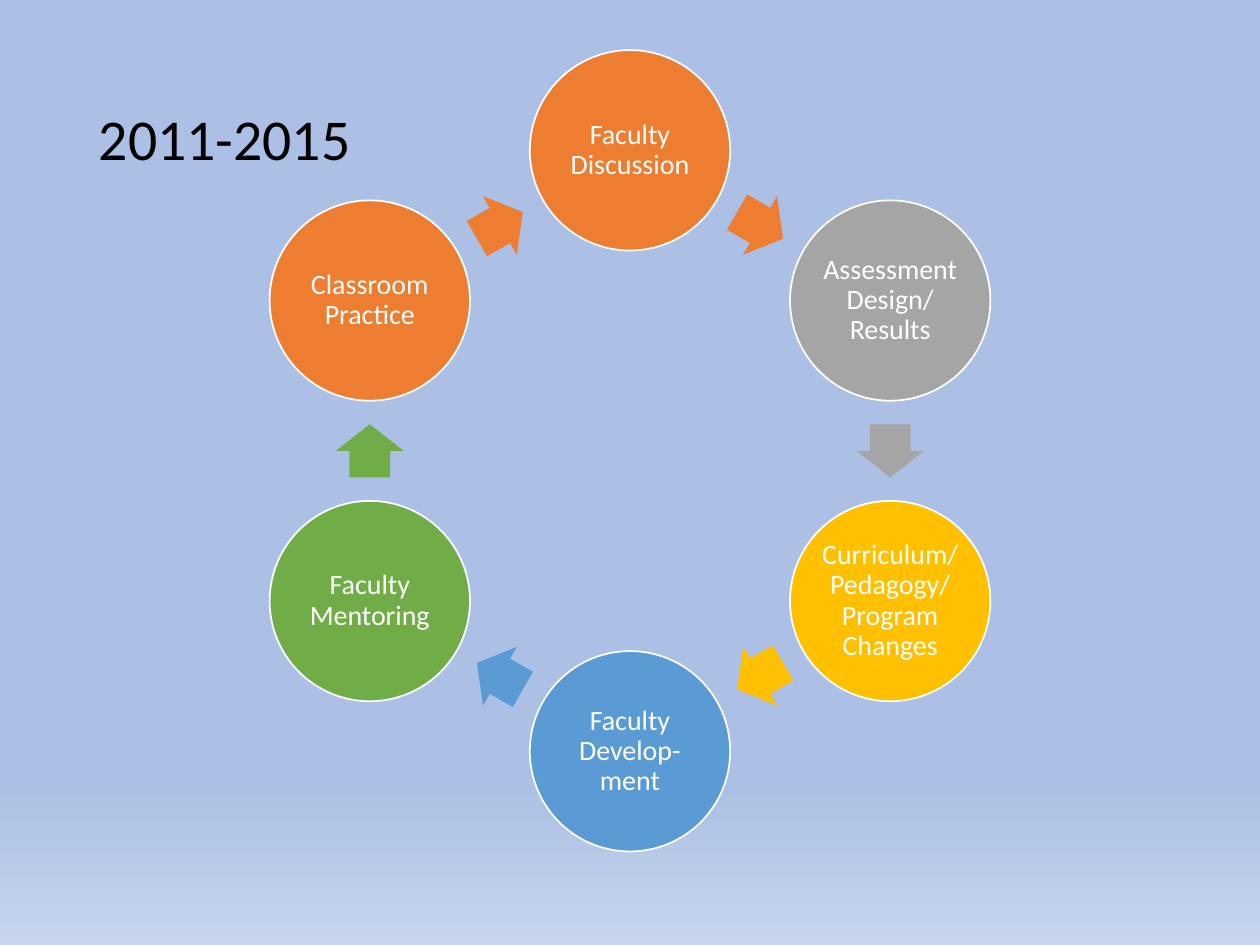
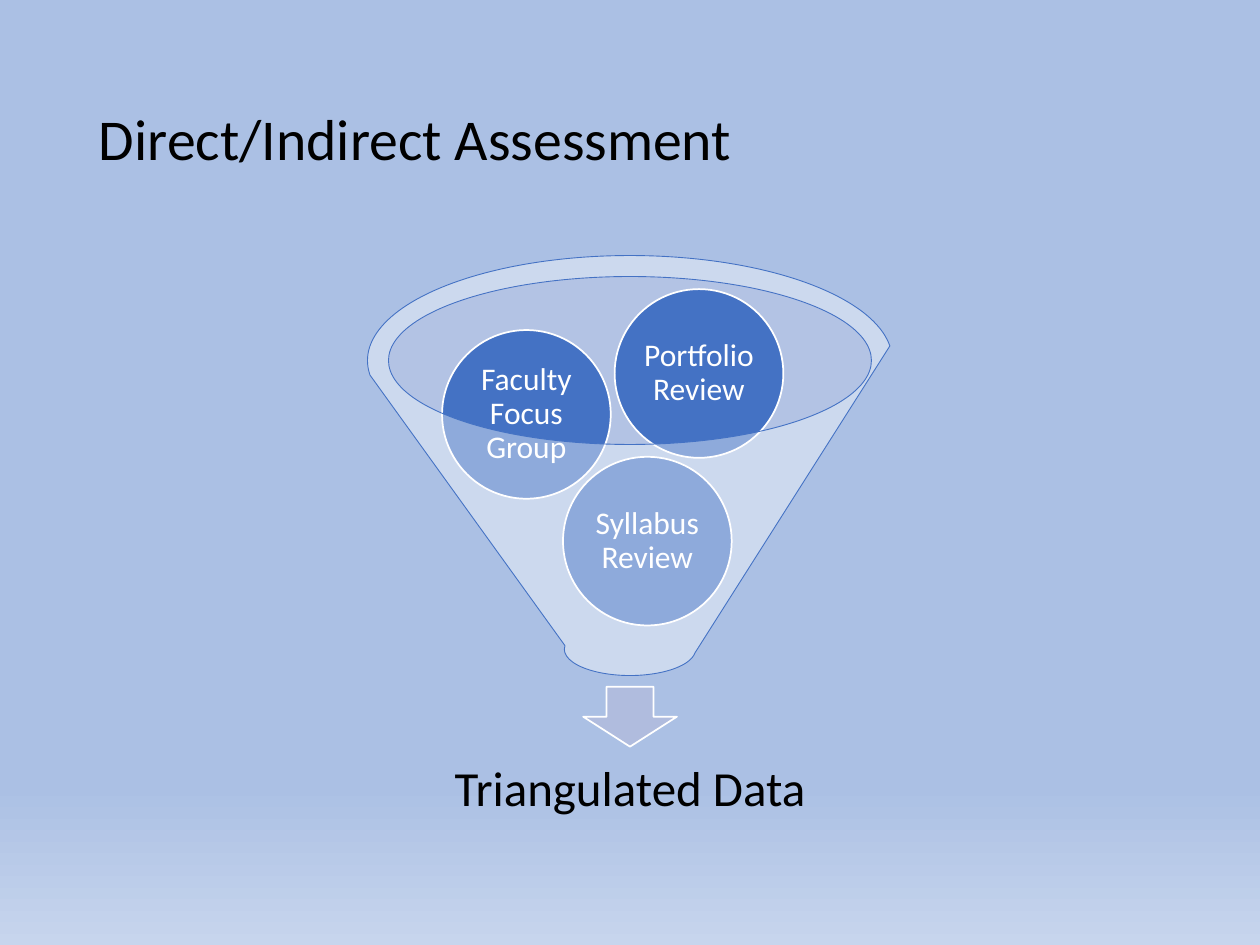
import math

from lxml import etree
from pptx import Presentation
from pptx.dml.color import RGBColor
from pptx.enum.shapes import MSO_SHAPE
from pptx.enum.text import MSO_ANCHOR, PP_ALIGN
from pptx.oxml.ns import qn
from pptx.util import Pt

ELLIPSE = MSO_SHAPE.OVAL
RIGHT_ARROW = MSO_SHAPE.RIGHT_ARROW
DOWN_ARROW = MSO_SHAPE.DOWN_ARROW
FUNNEL = MSO_SHAPE.FUNNEL
MIDDLE = MSO_ANCHOR.MIDDLE
LEFT, CENTER = PP_ALIGN.LEFT, PP_ALIGN.CENTER

FONT = "Calibri"
BLACK, WHITE = "000000", "FFFFFF"
BLUE = "4472C4"
BACKGROUND = [(0.83, "ABC0E4"), (1, "C7D5ED")]
TITLE_BOX = (49.5, 28.75, 621, 104.4)

# Clockwise from the top of the ring
CYCLE_STEPS = [
    ("Faculty Discussion", "ED7D31"),
    ("Assessment Design/ Results", "A5A5A5"),
    ("Curriculum/Pedagogy/Program Changes", "FFC000"),
    ("Faculty Develop-ment", "5B9BD5"),
    ("Faculty Mentoring", "70AD47"),
    ("Classroom Practice", "ED7D31"),
]
# Text with left and top inside the funnel box
FUNNEL_SOURCES = [
    ("Syllabus Review", 111.7, 115),
    ("Faculty Focus Group", 42.6, 42.6),
    ("Portfolio Review", 141.2, 19.2),
]


def color(hex_text):
    return RGBColor.from_string(hex_text)


def write_text(shape, text, size, ink=WHITE, align=CENTER, inset=None):
    frame = shape.text_frame
    frame.word_wrap = True
    frame.vertical_anchor = MIDDLE
    if inset is not None:
        frame.margin_left = frame.margin_right = Pt(inset)
        frame.margin_top = frame.margin_bottom = Pt(inset)
    para = frame.paragraphs[0]
    para.alignment = align
    para.line_spacing = 0.9
    span = para.add_run()
    span.text = text
    span.font.name = FONT
    span.font.size = Pt(size)
    span.font.color.rgb = color(ink)


def add_text_box(page, box, text, **text_format):
    write_text(page.shapes.add_textbox(*map(Pt, box)), text, **text_format)


def add_shape(page, kind, box, fill, line=None, line_width=1, opacity=None):
    shape = page.shapes.add_shape(kind, *map(Pt, box))
    shape.shadow.inherit = False
    shape.fill.solid()
    shape.fill.fore_color.rgb = color(fill)
    if opacity is not None:
        fill_color = shape.fill._xPr.find(qn("a:solidFill"))[0]
        etree.SubElement(fill_color, qn("a:alpha"), val=str(opacity * 1000))
    if line:
        shape.line.color.rgb = color(line)
        shape.line.width = Pt(line_width)
    else:
        shape.line.fill.background()
    return shape


def add_page(deck, title):
    page = deck.slides.add_slide(deck.slide_layouts[6])
    fill = page.background.fill
    fill.gradient()
    fill.gradient_angle = 270  # counter-clockwise, so top to bottom
    for stop, (position, shade) in zip(fill.gradient_stops, BACKGROUND):
        stop.position = position
        stop.color.rgb = color(shade)
    add_text_box(page, TITLE_BOX, title, size=33, ink=BLACK, align=LEFT)
    return page


def add_cycle(page, center_x, center_y, radius):
    diameter, arrow_width, arrow_height = 114.5, 30.3, 38.7
    turn = 360 / len(CYCLE_STEPS)
    arrow_radius = radius * math.cos(math.radians(turn / 2))

    def box_at(angle, distance, width, height):
        x = center_x + distance * math.sin(math.radians(angle))
        y = center_y - distance * math.cos(math.radians(angle))
        return x - width / 2, y - height / 2, width, height

    for index, (text, fill) in enumerate(CYCLE_STEPS):
        angle = index * turn
        circle = add_shape(page, ELLIPSE,
                           box_at(angle, radius, diameter, diameter),
                           fill, line=WHITE)
        write_text(circle, text, size=16, inset=1.6)
        # Arrow halfway to the next circle
        middle = angle + turn / 2
        arrow = add_shape(page, RIGHT_ARROW,
                          box_at(middle, arrow_radius, arrow_width, arrow_height),
                          fill)
        arrow.adjustments[0], arrow.adjustments[1] = 0.6, 0.5
        arrow.rotation = middle


def add_funnel(page, left, top, width, height):
    center_x = left + width / 2
    # Mouth of the funnel
    add_shape(page, ELLIPSE, (left + 11.6, top + 11.6, 276.4, 96),
              "C1C9E4", opacity=40)
    # Outcome below the spout
    add_shape(page, DOWN_ARROW, (center_x - 26.8, top + 246.4, 53.6, 34.3),
              "B0BCDE", line=WHITE)
    add_text_box(page, (center_x - 128.5, top + 273.8, 257, 64.3),
                 "Triangulated Data", size=28, ink=BLACK, inset=15.7)
    # Sources inside the funnel
    for text, offset_x, offset_y in FUNNEL_SOURCES:
        circle = add_shape(page, ELLIPSE,
                           (left + offset_x, top + offset_y, 96.4, 96.4),
                           BLUE, line=WHITE)
        write_text(circle, text, size=18, inset=1.8)
    # Translucent cone in front
    add_shape(page, FUNNEL, (left, top, width, height), WHITE,
              line=BLUE, line_width=0.5, opacity=40)


def main():
    deck = Presentation()
    deck.slide_width, deck.slide_height = Pt(720), Pt(540)
    add_cycle(add_page(deck, "2011-2015"), 360, 257.6, 171.7)
    add_funnel(add_page(deck, "Direct/Indirect Assessment"),
               210, 146, 300, 240)
    deck.save("out.pptx")


if __name__ == "__main__":
    main()
